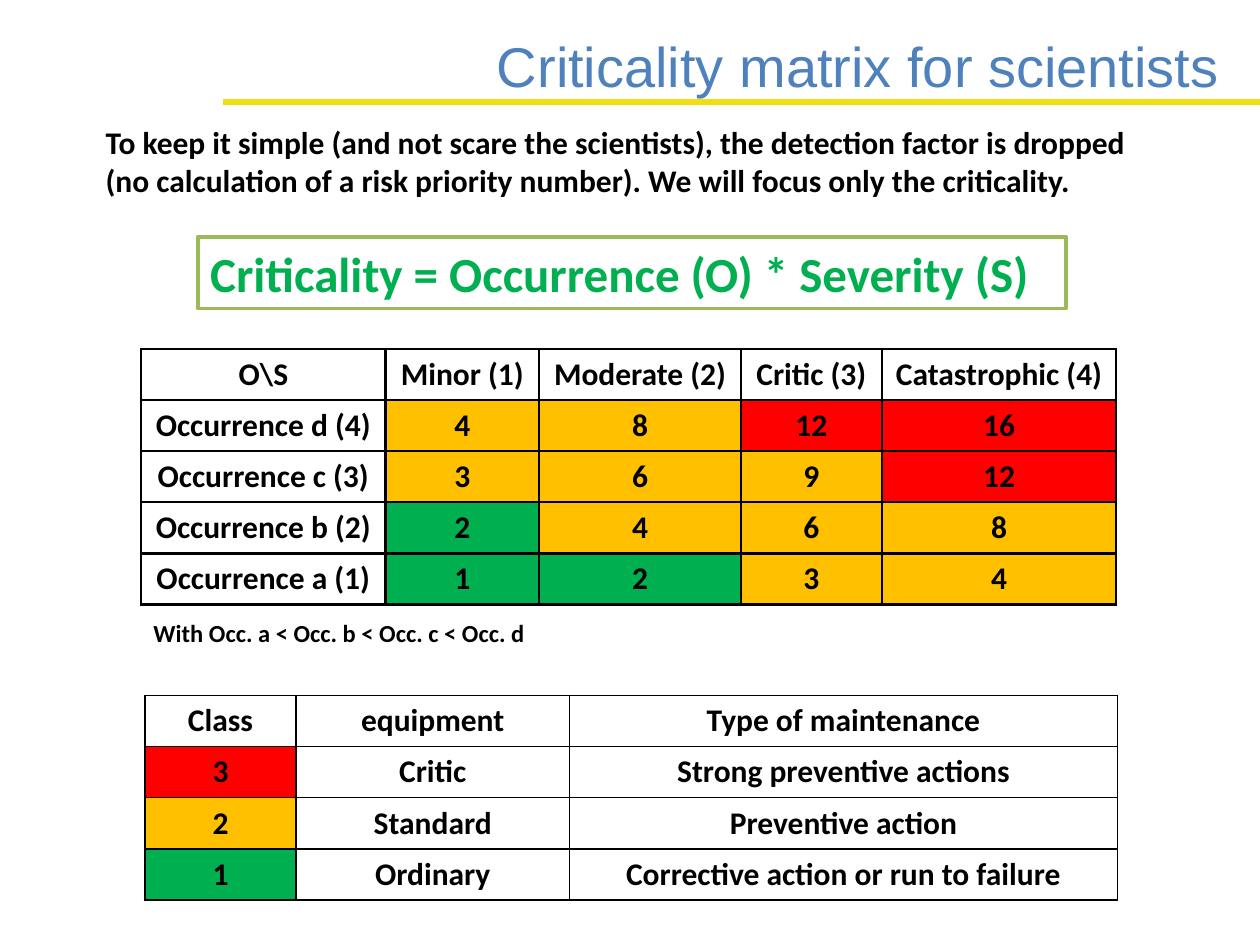
from dataclasses import dataclass

from lxml import etree
from pptx import Presentation
from pptx.dml.color import RGBColor
from pptx.enum.shapes import MSO_CONNECTOR, MSO_SHAPE
from pptx.enum.text import MSO_ANCHOR, MSO_AUTO_SIZE, PP_ALIGN
from pptx.oxml.ns import qn
from pptx.util import Emu, Inches, Pt

LEFT, CENTER, RIGHT = PP_ALIGN.LEFT, PP_ALIGN.CENTER, PP_ALIGN.RIGHT
TOP, MIDDLE = MSO_ANCHOR.TOP, MSO_ANCHOR.MIDDLE
STRAIGHT, RECT = MSO_CONNECTOR.STRAIGHT, MSO_SHAPE.RECTANGLE
NO_AUTOFIT = MSO_AUTO_SIZE.NONE

# The slide is a grid of 100 columns by 75 rows
GRID_COLS, GRID_ROWS = 100, 75
BLACK, WHITE, BLUE, YELLOW, OLIVE = "000000", "FFFFFF", "4F81BD", "EEDE12", "9BBB59"
RED, AMBER, GREEN = "FF0000", "FFC000", "00B050"
ROW_HEIGHT = 4.05

prs = Presentation()
prs.slide_width, prs.slide_height = Inches(10), Inches(7.5)


@dataclass
class Box:
    left: float
    top: float
    width: float
    height: float

    def emu(self) -> tuple:
        return (col(self.left), row(self.top), col(self.width), row(self.height))


@dataclass
class Style:
    size: int
    color: str = BLACK
    name: str = "Calibri"
    bold: bool = True
    align: int = LEFT


@dataclass
class Cell:
    text: str
    fill: str = ""


@dataclass
class Grid:
    left: float
    top: float
    widths: list
    border: float
    rows: list


def col(n: float) -> Emu:
    return Emu(round(prs.slide_width * n / GRID_COLS))


def row(n: float) -> Emu:
    return Emu(round(prs.slide_height * n / GRID_ROWS))


def rgb(value: str) -> RGBColor:
    return RGBColor.from_string(value)


def write(tf, text: str, style: Style) -> None:
    p = tf.paragraphs[0]
    p.alignment = style.align
    r = p.add_run()
    r.text = text
    for attr, value in {"size": Pt(style.size), "name": style.name, "bold": style.bold}.items():
        setattr(r.font, attr, value)
    r.font.color.rgb = rgb(style.color)


def write_shape(sp, text: str, style: Style, wrap: bool = True, anchor: int = TOP) -> None:
    frame_format = {"word_wrap": wrap, "auto_size": NO_AUTOFIT, "vertical_anchor": anchor}
    for attr, value in frame_format.items():
        setattr(sp.text_frame, attr, value)
    write(sp.text_frame, text, style)


def add_borders(cell, width: float) -> None:
    tc_pr = cell._tc.get_or_add_tcPr()
    for side in ("a:lnL", "a:lnR", "a:lnT", "a:lnB"):
        ln = etree.SubElement(tc_pr, qn(side), w=str(Pt(width)))
        fill = etree.SubElement(ln, qn("a:solidFill"))
        etree.SubElement(fill, qn("a:srgbClr"), val=BLACK)


def add_grid(s, grid: Grid) -> None:
    box = Box(grid.left, grid.top, sum(grid.widths), ROW_HEIGHT * len(grid.rows))
    table = s.shapes.add_table(len(grid.rows), len(grid.widths), *box.emu()).table
    table.first_row = table.horz_banding = False
    for column, width in zip(table.columns, grid.widths):
        column.width = col(width)
    for i, cells in enumerate(grid.rows):
        table.rows[i].height = row(ROW_HEIGHT)
        for j, item in enumerate(cells):
            cell = table.cell(i, j)
            add_borders(cell, grid.border)
            if item.fill:
                cell.fill.solid()
                cell.fill.fore_color.rgb = rgb(item.fill)
            else:
                cell.fill.background()
            write(cell.text_frame, item.text, Style(18, align=CENTER))


def score_cell(score: int) -> Cell:
    return Cell(str(score), RED if score >= 12 else AMBER if score >= 3 else GREEN)


# Table contents: each score is occurrence times severity
severities = ["Minor", "Moderate", "Critic", "Catastrophic"]
matrix_rows = [[Cell("O\\S")] + [Cell(f"{name} ({n})") for n, name in enumerate(severities, 1)]]
for occ, letter in zip((4, 3, 2, 1), "dcba"):
    scores = [score_cell(occ * sev) for sev in range(1, len(severities) + 1)]
    matrix_rows.append([Cell(f"Occurrence {letter} ({occ})")] + scores)

class_rows = [
    [Cell("Class"), Cell("equipment"), Cell("Type of maintenance")],
    [Cell("3", RED), Cell("Critic"), Cell("Strong preventive actions")],
    [Cell("2", AMBER), Cell("Standard"), Cell("Preventive action")],
    [Cell("1", GREEN), Cell("Ordinary"), Cell("Corrective action or run to failure")],
]

s = prs.slides.add_slide(prs.slide_layouts[5])

# Rule under the title
rule = s.shapes.add_connector(STRAIGHT, col(100), row(8.1), col(17.7), row(8.1))
rule.line.color.rgb = rgb(YELLOW)
rule.line.width = Pt(3)
etree.SubElement(rule._element.spPr, qn("a:effectLst"))

# Title
title = s.shapes.title
title.left, title.top, title.width, title.height = Box(18.9, 2.1, 78.9, 6.2).emu()
write_shape(title, "Criticality matrix for scientists",
            Style(32, BLUE, "Arial", False, RIGHT), anchor=MIDDLE)

# Introduction
intro = s.shapes.add_textbox(*Box(7.4, 9.3, 85.5, 7.1).emu())
write_shape(intro, "To keep it simple (and not scare the scientists), the detection factor is "
            "dropped (no calculation of a risk priority number). We will focus only the "
            "criticality.", Style(18))

# Formula
formula = s.shapes.add_shape(RECT, *Box(15.7, 18.8, 68.9, 5.7).emu())
formula.shadow.inherit = False
formula.fill.solid()
formula.fill.fore_color.rgb = rgb(WHITE)
formula.line.color.rgb = rgb(OLIVE)
formula.line.width = Pt(2)
write_shape(formula, "Criticality = Occurrence (O) * Severity (S)", Style(28, GREEN))

# Criticality matrix and its note
add_grid(s, Grid(11.2, 27.7, [19.4, 12.2, 16, 11.2, 18.6], 1.5, matrix_rows))
note = s.shapes.add_textbox(*Box(11.2, 48.6, 31.7, 3.4).emu())
write_shape(note, "With Occ. a < Occ. b < Occ. c < Occ. d", Style(14), wrap=False)

# Maintenance classes
add_grid(s, Grid(11.5, 55.2, [12, 21.7, 43.5], 1, class_rows))

prs.save("out.pptx")
